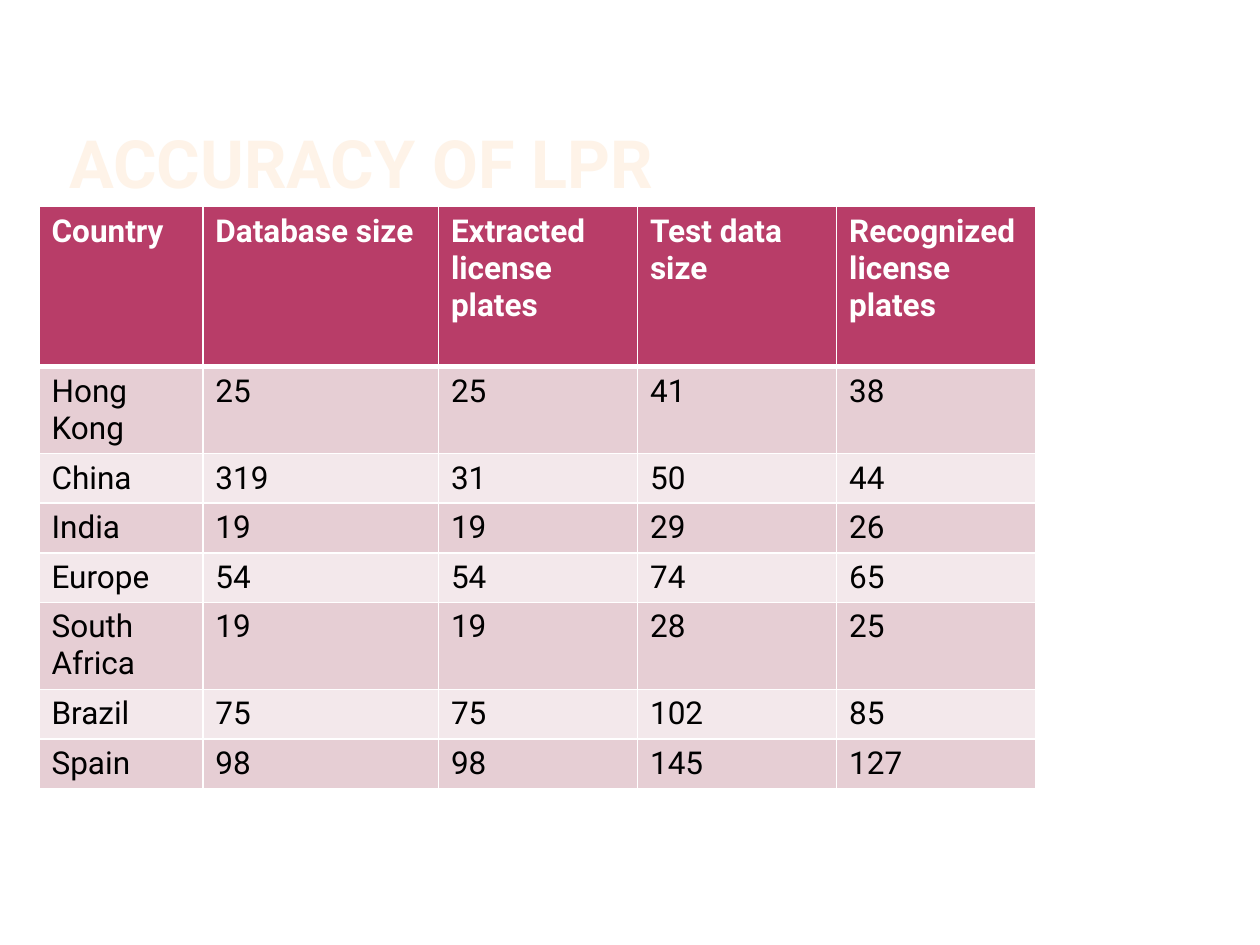
"""Build a slide with a table of licence plate recognition accuracy by country."""
import dataclasses

import lxml.etree
import pptx
import pptx.dml.color
import pptx.enum.text
import pptx.oxml.ns
import pptx.util

Inches = pptx.util.Inches
Pt = pptx.util.Pt


@dataclasses.dataclass(frozen=True)
class Theme:
    font: str = "Roboto"
    title_size: int = 38
    table_size: int = 18
    title: str = "FEF3E8"
    header: str = "B83D68"
    bands: tuple = ("E6CED4", "F3E8EB")
    white: str = "FFFFFF"
    text: str = "000000"
    thin_line: int = 1
    header_line: int = 3


THEME = Theme()
LEFT, WIDTH = 0.31, 7.91
COLUMN_WIDTHS = (1.3, 1.87, 1.58, 1.58, 1.58)
HEADER_HEIGHT, LINE_HEIGHT, TALL_HEIGHT = 1.27, 0.39, 0.69
HEADER = ("Country", "Database size", "Extracted license plates",
          "Test data size", "Recognized license plates")
COUNTRIES = (
    ("Hong Kong", 25, 25, 41, 38),
    ("China", 319, 31, 50, 44),
    ("India", 19, 19, 29, 26),
    ("Europe", 54, 54, 74, 65),
    ("South Africa", 19, 19, 28, 25),
    ("Brazil", 75, 75, 102, 85),
    ("Spain", 98, 98, 145, 127),
)


def rgb(value):
    return pptx.dml.color.RGBColor.from_string(value)


def add_run(paragraph, text, size, color, bold):
    run = paragraph.add_run()
    run.text = text
    run.font.name = THEME.font
    run.font.size = Pt(size)
    run.font.bold = bold
    run.font.color.rgb = rgb(color)


def set_title(slide, text):
    title = slide.shapes.title
    title.left, title.top = Inches(0.5), Inches(0.35)
    title.width, title.height = Inches(7.92), Inches(1.25)
    frame = title.text_frame
    frame.margin_left = frame.margin_right = Inches(0.05)
    frame.margin_top = frame.margin_bottom = 0
    frame.vertical_anchor = pptx.enum.text.MSO_ANCHOR.BOTTOM
    paragraph = frame.paragraphs[0]
    paragraph.alignment = pptx.enum.text.PP_ALIGN.LEFT
    add_run(paragraph, text, THEME.title_size, THEME.title, True)


def set_borders(cell, row):
    qn = pptx.oxml.ns.qn
    properties = cell._tc.get_or_add_tcPr()
    widths = {"lnL": THEME.thin_line, "lnR": THEME.thin_line,
              "lnT": THEME.header_line if row == 1 else THEME.thin_line,
              "lnB": THEME.header_line if row == 0 else THEME.thin_line}
    for side, width in widths.items():
        line = lxml.etree.SubElement(properties, qn(f"a:{side}"), w=str(Pt(width)))
        fill = lxml.etree.SubElement(line, qn("a:solidFill"))
        lxml.etree.SubElement(fill, qn("a:srgbClr"), val=THEME.white)


def fill_cell(cell, row, value):
    is_header = row == 0
    set_borders(cell, row)
    cell.fill.solid()
    cell.fill.fore_color.rgb = rgb(THEME.header if is_header else THEME.bands[(row - 1) % 2])
    add_run(cell.text_frame.paragraphs[0], str(value), THEME.table_size,
            THEME.white if is_header else THEME.text, is_header)


def add_accuracy_table(slide):
    rows = (HEADER, *COUNTRIES)
    heights = [HEADER_HEIGHT] + [TALL_HEIGHT if " " in country[0] else LINE_HEIGHT
                                 for country in COUNTRIES]
    table = slide.shapes.add_table(len(rows), len(HEADER), Inches(LEFT), Inches(1.64),
                                   Inches(WIDTH), Inches(sum(heights))).table
    for column, width in zip(table.columns, COLUMN_WIDTHS):
        column.width = Inches(width)
    for row, (values, height) in enumerate(zip(rows, heights)):
        table.rows[row].height = Inches(height)
        for column, value in enumerate(values):
            fill_cell(table.cell(row, column), row, value)


def main():
    presentation = pptx.Presentation()
    presentation.slide_width, presentation.slide_height = Inches(10), Inches(7.5)
    slide = presentation.slides.add_slide(presentation.slide_layouts.get_by_name("Title Only"))
    set_title(slide, "ACCURACY OF LPR")
    add_accuracy_table(slide)
    presentation.save("out.pptx")


if __name__ == "__main__":
    main()
